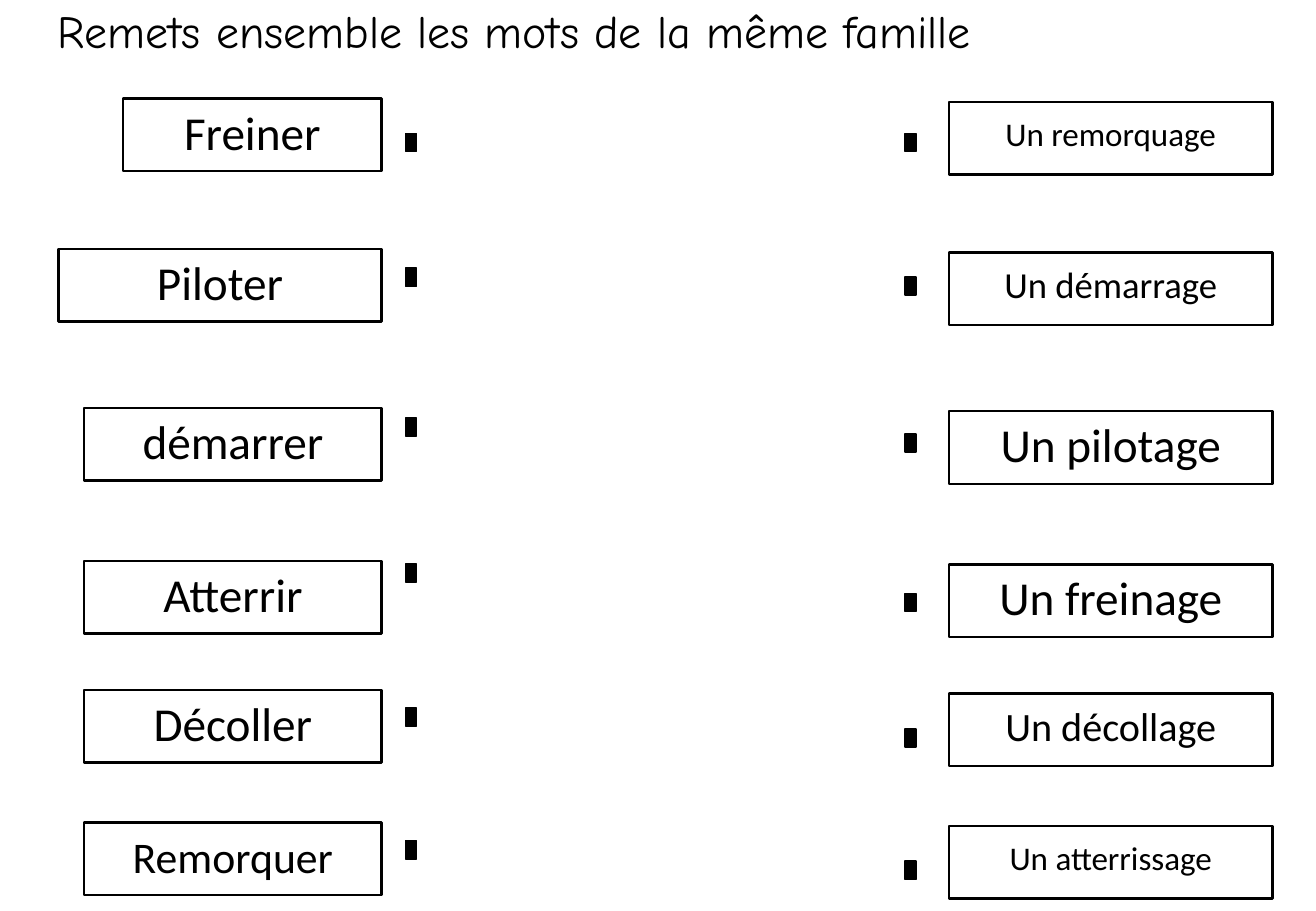
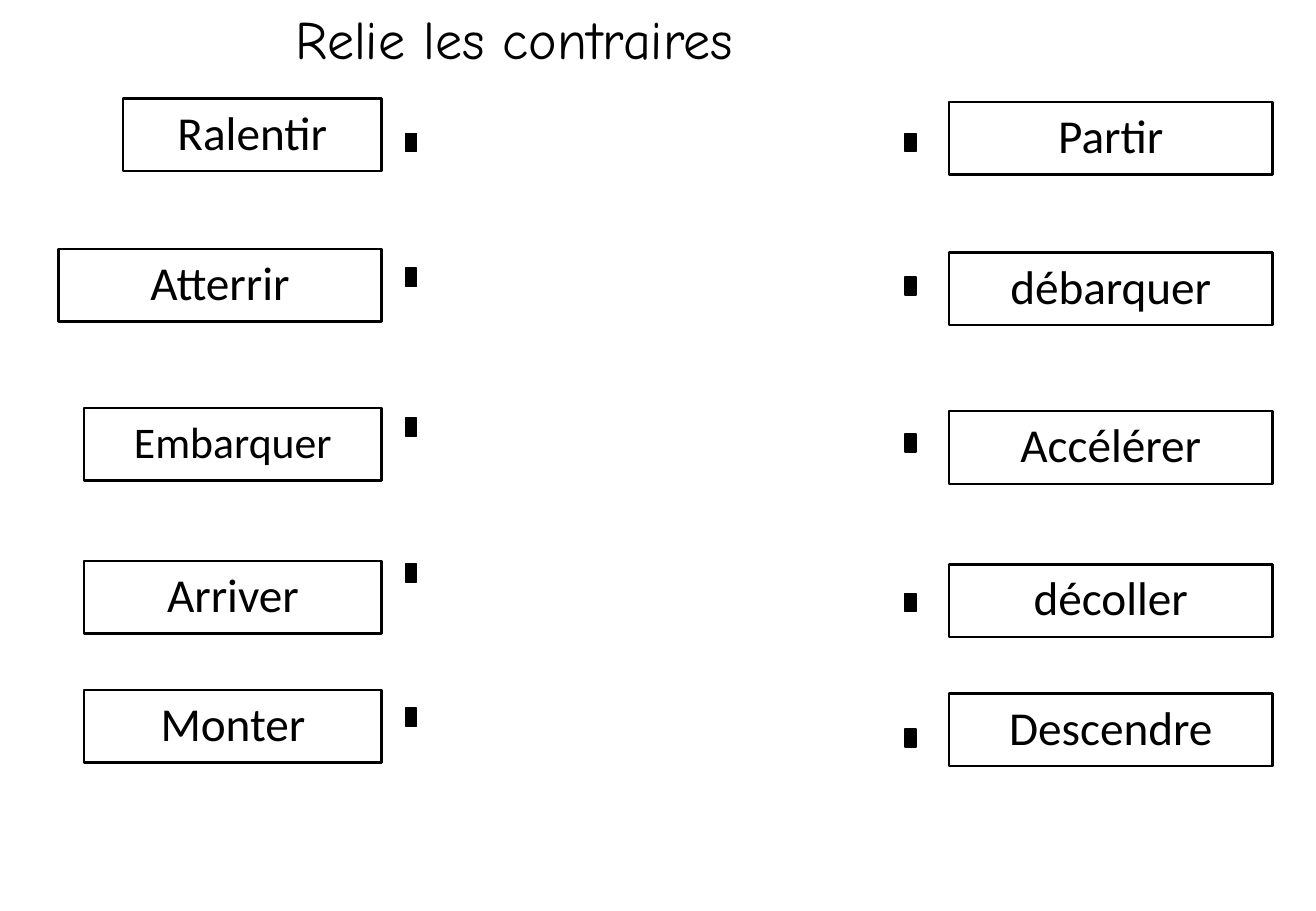
from pptx import Presentation
from pptx.dml.color import RGBColor
from pptx.enum.shapes import MSO_SHAPE as SHAPE
from pptx.enum.text import MSO_ANCHOR as ANCHOR, MSO_AUTO_SIZE as AUTO_SIZE, PP_ALIGN as ALIGN
from pptx.util import Cm, Pt

BLACK = "000000"
TITLE_FONT, TITLE_SIZE = "Comic Neue", 32
WORD_FONT, WORD_SIZE = "Calibri", 28
# Line spacing that goes with each text scale
SPACING = {1: 0.9, 0.925: 0.9, 0.85: 0.8, 0.775: 0.7, 0.7: 0.7}

TITLE_BOX = (0, 0.15, 21.51, 1.68)
LEFT_BOX = (1.22, 2.06, 7.49, 16.66)
RIGHT_BOX = (18.92, 2.13, 7.68, 16.66)

ROW_TOPS = (0, 3.15, 6.47, 9.67, 12.37, 15.14)
ROW_HEIGHT = 1.52
DOT_WIDTH, DOT_HEIGHT = 0.23, 0.38
# Dot tops, measured from the top of their row
LEFT_DOTS = (0.73, 0.4, 0.21, 0.06, 0.38, 0.38)
RIGHT_DOTS = (0.66, 0.51, 0.48, 0.61, 0.74, 0.74)
LEFT_WIDTHS = (5.41, 6.76, 6.22, 6.22, 6.22, 6.22)
RIGHT_WIDTHS = (6.76,) * 6

# Each exercise: title, left words, right words; every text has its scale
FAMILIES = (
    ("Remets ensemble les mots de la même famille", 0.85),
    [("Freiner", 1), ("Piloter", 1), ("démarrer", 1),
     ("Atterrir", 1), ("Décoller", 1), ("Remorquer", 0.925)],
    [("Un remorquage", 0.7), ("Un démarrage", 0.775), ("Un pilotage", 1),
     ("Un freinage", 1), ("Un décollage", 0.85), ("Un atterrissage", 0.7)],
)
OPPOSITES = (
    ("Relie les contraires", 1),
    [("Ralentir", 1), ("Atterrir", 1), ("Embarquer", 0.925),
     ("Arriver", 1), ("Monter", 1)],
    [("Partir", 1), ("débarquer", 1), ("Accélérer", 1),
     ("décoller", 1), ("Descendre", 1)],
)


def color(hex_code):
    return RGBColor.from_string(hex_code)


def write(tf, text, font, size, scale, anchor):
    tf.word_wrap = True
    tf.auto_size = AUTO_SIZE.NONE
    tf.vertical_anchor = anchor
    p = tf.paragraphs[0]
    p.text = text
    p.alignment = ALIGN.CENTER
    p.line_spacing = SPACING[scale]
    p.space_before = Pt(10)
    p.font.name = font
    p.font.size = Pt(round(size * scale, 1))
    p.font.color.rgb = color(BLACK)


def add_rect(s, x, y, w, h, line_width):
    sp = s.shapes.add_shape(SHAPE.RECTANGLE, Cm(x), Cm(y), Cm(w), Cm(h))
    sp.shadow.inherit = False
    sp.line.color.rgb = color(BLACK)
    sp.line.width = Pt(line_width)
    return sp


def add_word(s, x, y, w, text, scale):
    sp = add_rect(s, x, y, w, ROW_HEIGHT, 1.5)
    sp.fill.background()
    write(sp.text_frame, text, WORD_FONT, WORD_SIZE, scale, ANCHOR.MIDDLE)


def add_dot(s, x, y):
    sp = add_rect(s, x, y, DOT_WIDTH, DOT_HEIGHT, 1)
    sp.fill.solid()
    sp.fill.fore_color.rgb = color(BLACK)


def add_title(s, box, text, scale):
    sp = s.shapes.title
    sp.left, sp.top, sp.width, sp.height = map(Cm, box)
    write(sp.text_frame, text, TITLE_FONT, TITLE_SIZE, scale, ANCHOR.TOP)


def add_column(s, box, words, widths, dots, dots_right):
    """Place words in rows, with dots along one edge and words by the other."""
    left, top, width, _ = box
    for (text, scale), row_top, w, dot_top in zip(words, ROW_TOPS, widths, dots):
        y = top + row_top
        if dots_right:
            # Words line up on the right edge of the widest one
            word_x, dot_x = left + max(widths) - w, left + width - DOT_WIDTH
        else:
            word_x, dot_x = left + width - w, left
        add_word(s, word_x, y, w, text, scale)
        add_dot(s, dot_x, y + dot_top)


def add_matching_slide(prs, title, left_words, right_words):
    s = prs.slides.add_slide(prs.slide_layouts.get_by_name("Title Only"))
    add_title(s, TITLE_BOX, *title)
    add_column(s, LEFT_BOX, left_words, LEFT_WIDTHS, LEFT_DOTS, True)
    add_column(s, RIGHT_BOX, right_words, RIGHT_WIDTHS, RIGHT_DOTS, False)


def main():
    prs = Presentation()
    prs.slide_width, prs.slide_height = Cm(27.51), Cm(19.05)
    for exercise in (FAMILIES, OPPOSITES):
        add_matching_slide(prs, *exercise)
    prs.save("out.pptx")


if __name__ == "__main__":
    main()
